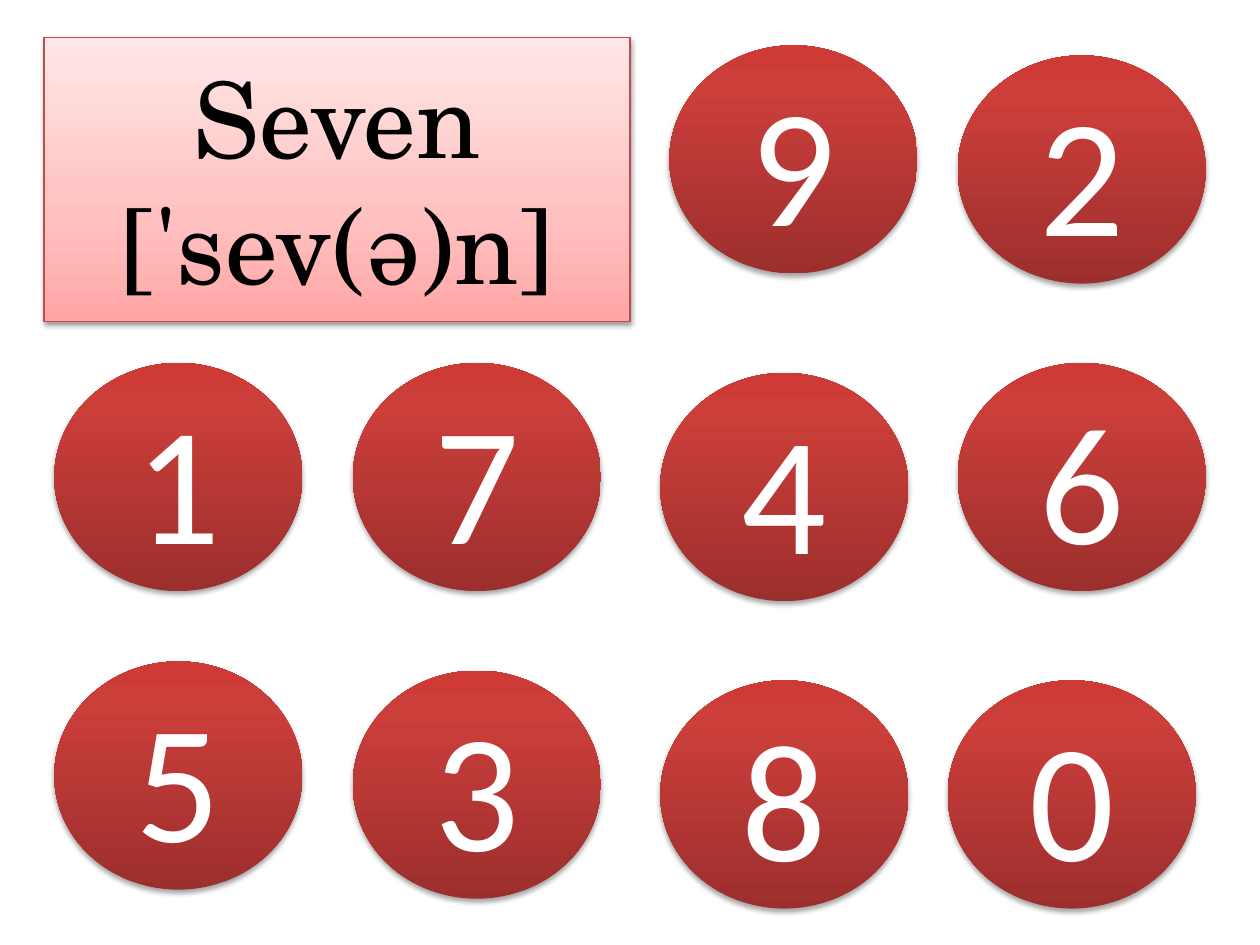
from dataclasses import dataclass

import lxml.etree
import pptx
import pptx.dml.color
import pptx.enum.shapes
import pptx.enum.text
import pptx.oxml.ns
import pptx.util


@dataclass(frozen=True)
class Look:
    stops: tuple[tuple[int, str], ...]
    shadow_alpha: int
    shadow_distance: float
    font: str
    size: int
    text_color: str


@dataclass(frozen=True)
class Ball:
    digit: str
    left: float
    top: float


BALL_WIDTH, BALL_HEIGHT = 141.75, 130.4
SHADOW_BLUR = 3.1
TITLE_LOOK = Look(
    ((0, "FFA6A5"), (35, "FFC0BF"), (100, "FFE7E7")),
    38, 1.6, "TeX Gyre Schola", 60, "000000",
)
BALL_LOOK = Look(
    ((0, "9C2F2D"), (80, "CB3E3A"), (100, "CE3B37")),
    35, 1.8, "Calibri", 96, "FFFFFF",
)
BALLS = (
    Ball("2", 547.2, 31.7),
    Ball("1", 31, 207.4),
    Ball("7", 201.6, 207.4),
    Ball("4", 377.3, 213.1),
    Ball("6", 547.2, 207.4),
    Ball("5", 31, 378),
    Ball("3", 201.6, 383.2),
    Ball("8", 377.3, 388.8),
    Ball("0", 541.5, 388.8),
    Ball("9", 382.5, 25.9),
)


def color(value: str) -> pptx.dml.color.RGBColor:
    return pptx.dml.color.RGBColor.from_string(value)


def add_element(parent, tag: str, **attributes):
    element = lxml.etree.SubElement(parent, pptx.oxml.ns.qn(tag))
    for name, value in attributes.items():
        element.set(name, str(value))
    return element


def place(shape, left: float, top: float, width: float, height: float) -> None:
    shape.left, shape.top = pptx.util.Pt(left), pptx.util.Pt(top)
    shape.width, shape.height = pptx.util.Pt(width), pptx.util.Pt(height)


def apply_gradient(shape, look: Look) -> None:
    shape.fill.gradient()
    shape.fill.gradient_angle = 90
    stop_list = shape.element.spPr.find(".//" + pptx.oxml.ns.qn("a:gsLst"))
    for stop in list(stop_list):
        stop_list.remove(stop)
    for position, value in look.stops:
        stop = add_element(stop_list, "a:gs", pos=position * 1000)
        add_element(stop, "a:srgbClr", val=value)


def apply_shadow(shape, look: Look) -> None:
    shape.shadow.inherit = False
    effects = shape.element.spPr.find(pptx.oxml.ns.qn("a:effectLst"))
    shadow = add_element(
        effects, "a:outerShdw",
        blurRad=int(pptx.util.Pt(SHADOW_BLUR)),
        dist=int(pptx.util.Pt(look.shadow_distance)),
        dir=90 * 60000, rotWithShape=0,
    )
    shade = add_element(shadow, "a:srgbClr", val="000000")
    add_element(shade, "a:alpha", val=look.shadow_alpha * 1000)


def write_text(shape, text: str, look: Look) -> None:
    frame = shape.text_frame
    frame.text = text
    frame.word_wrap = True
    frame.auto_size = pptx.enum.text.MSO_AUTO_SIZE.NONE
    frame.vertical_anchor = pptx.enum.text.MSO_ANCHOR.MIDDLE
    para = frame.paragraphs[0]
    para.alignment = pptx.enum.text.PP_ALIGN.CENTER
    span = para.runs[0]
    span.font.name = look.font
    span.font.size = pptx.util.Pt(look.size)
    span.font.color.rgb = color(look.text_color)


def dress(shape, text: str, look: Look) -> None:
    apply_gradient(shape, look)
    apply_shadow(shape, look)
    write_text(shape, text, look)


def draw_title(page) -> None:
    title = page.shapes.title
    place(title, 25.2, 21.6, 334.8, 162)
    title.line.color.rgb = color("BF4C48")
    title.line.width = pptx.util.Pt(0.75)
    dress(title, "Seven ['sev(ə)n]", TITLE_LOOK)


def draw_ball(page, ball: Ball) -> None:
    shape = page.shapes.add_shape(pptx.enum.shapes.MSO_SHAPE.OVAL, 0, 0, 0, 0)
    place(shape, ball.left, ball.top, BALL_WIDTH, BALL_HEIGHT)
    shape.line.fill.background()
    dress(shape, ball.digit, BALL_LOOK)


def main() -> None:
    deck = pptx.Presentation()
    deck.slide_width, deck.slide_height = pptx.util.Pt(720), pptx.util.Pt(540)
    page = deck.slides.add_slide(deck.slide_layouts[5])
    draw_title(page)
    for ball in BALLS:
        draw_ball(page, ball)
    deck.save("out.pptx")


if __name__ == "__main__":
    main()
